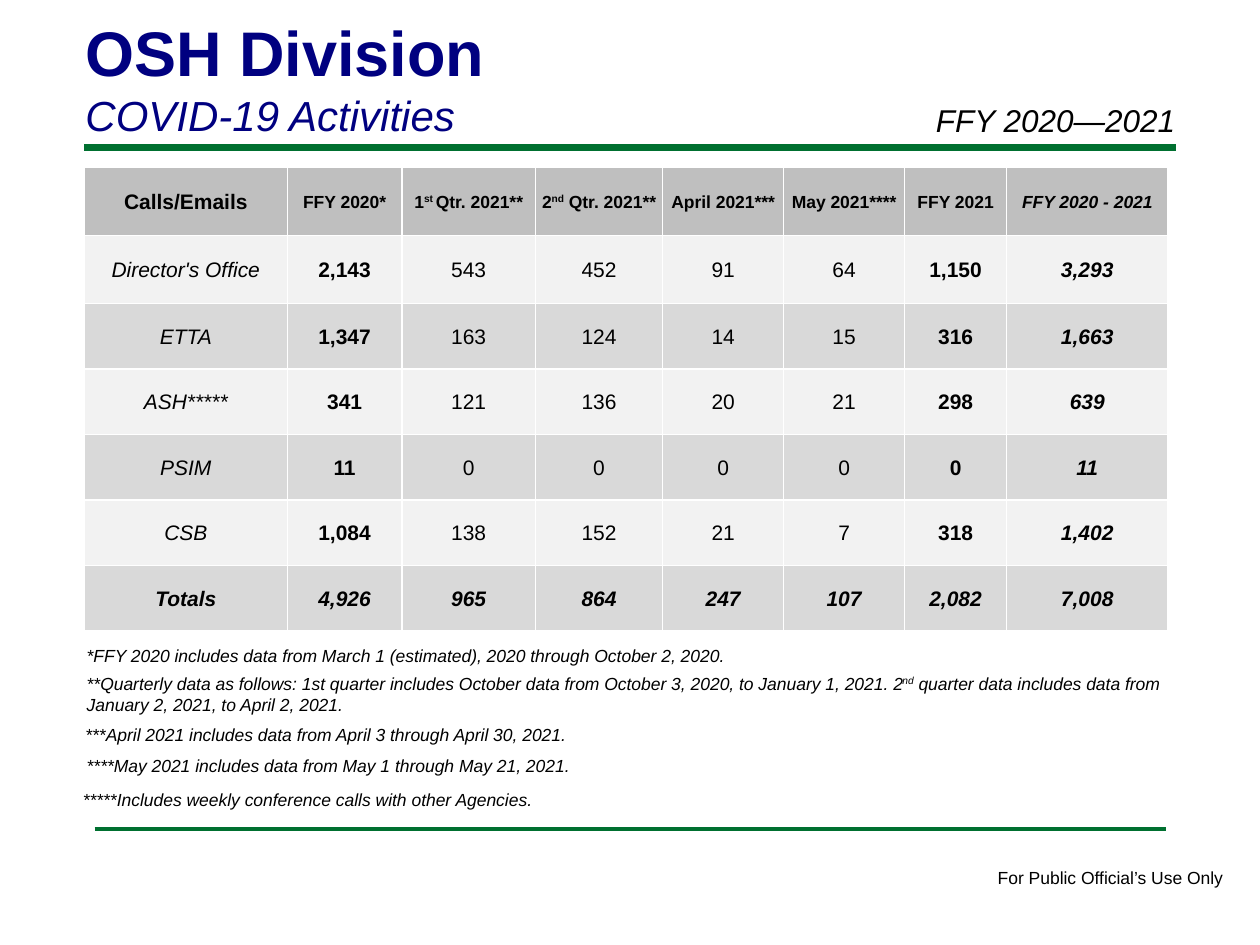
from dataclasses import dataclass

from lxml import etree
from pptx import Presentation
from pptx.dml.color import RGBColor
from pptx.enum.shapes import MSO_CONNECTOR
from pptx.enum.text import MSO_ANCHOR, MSO_AUTO_SIZE, PP_ALIGN
from pptx.oxml.ns import qn
from pptx.util import Inches, Pt

STRAIGHT = MSO_CONNECTOR.STRAIGHT
MIDDLE = MSO_ANCHOR.MIDDLE
GROW = MSO_AUTO_SIZE.SHAPE_TO_FIT_TEXT
CENTER = PP_ALIGN.CENTER

COLORS = {"rule": "007030", "title": "000080", "text": "000000", "border": "FFFFFF",
          "header": "BFBFBF", "light": "F2F2F2", "dark": "D9D9D9"}
FONT = "Arial"

# The page is a grid of 100 columns by 75 rows
UNIT = Inches(0.1)
PAGE_COLUMNS, PAGE_ROWS = 100, 75


@dataclass
class Rule:
    left: float
    top: float
    weight: float


@dataclass
class Note:
    text: str
    left: float
    top: float
    width: float = 87.3
    height: float = 2.7


RULES = [Rule(6.7, 11.7, 4), Rule(7.5, 65.8, 2)]

# Text between carets is superscript
NOTES = [
    Note("*FFY 2020 includes data from March 1 (estimated), 2020 through October 2, 2020.",
         5.9, 50.7),
    Note("**Quarterly data as follows: 1st quarter includes October data from October 3, 2020, "
         "to January 1, 2021. 2^nd^ quarter data includes data from January 2, 2021, "
         "to April 2, 2021.", 5.9, 52.9, height=4.4),
    Note("***April 2021 includes data from April 3 through April 30, 2021.", 5.8, 57),
    Note("****May 2021 includes data from May 1 through May 21, 2021.", 5.9, 59.4),
    Note("*****Includes weekly conference calls with other Agencies.", 5.6, 62.1, width=37.7),
]

COLUMN_WIDTHS = [16.1, 9.1, 10.6, 10.1, 9.6, 9.6, 8.1, 12.8]
ROW_HEIGHTS = [5.4] * 2 + [5.2] * 5
CALLS = [
    ["Calls/Emails", "FFY 2020*", "1^st ^Qtr. 2021**", "2^nd^ Qtr. 2021**",
     "April 2021***", "May 2021****", "FFY 2021", "FFY 2020 - 2021"],
    ["Director's Office", "2,143", "543", "452", "91", "64", "1,150", "3,293"],
    ["ETTA", "1,347", "163", "124", "14", "15", "316", "1,663"],
    ["ASH*****", "341", "121", "136", "20", "21", "298", "639"],
    ["PSIM", "11", "0", "0", "0", "0", "0", "11"],
    ["CSB", "1,084", "138", "152", "21", "7", "318", "1,402"],
    ["Totals", "4,926", "965", "864", "247", "107", "2,082", "7,008"],
]
BOLD_COLUMNS = {1, 6, 7}
ITALIC_COLUMNS = {0, 7}


def grid(*steps: float) -> list[int]:
    return [round(step * UNIT) for step in steps]


def write(para, text: str, *, size: float, color: str = "text",
          bold: bool = False, italic: bool = False) -> None:
    for index, piece in enumerate(text.split("^")):
        span = para.add_run()
        span.text = piece
        font = span.font
        font.name, font.size, font.bold, font.italic = FONT, Pt(size), bold, italic
        font.color.rgb = RGBColor.from_string(COLORS[color])
        if index % 2:
            span._r.get_or_add_rPr().set("baseline", "30000")


def add_box(page, left: float, top: float, width: float, height: float, wrap: bool = True):
    frame = page.shapes.add_textbox(*grid(left, top, width, height)).text_frame
    frame.word_wrap = wrap
    frame.auto_size = GROW
    return frame


def draw_rule(page, rule: Rule) -> None:
    ends = grid(rule.left, rule.top, PAGE_COLUMNS - rule.left, rule.top)
    line = page.shapes.add_connector(STRAIGHT, *ends)
    line.line.color.rgb = RGBColor.from_string(COLORS["rule"])
    line.line.width = Pt(rule.weight)
    etree.SubElement(line._element.spPr, qn("a:effectLst"))


def draw_borders(cell) -> None:
    properties = cell._tc.get_or_add_tcPr()
    for side in ("a:lnL", "a:lnR", "a:lnT", "a:lnB"):
        edge = etree.SubElement(properties, qn(side), w=str(Pt(1)))
        fill = etree.SubElement(edge, qn("a:solidFill"))
        etree.SubElement(fill, qn("a:srgbClr"), val=COLORS["border"])


def draw_cell(cell, text: str, row: int, column: int) -> None:
    header, totals = row == 0, row == len(CALLS) - 1
    cell.margin_left = cell.margin_right = cell.margin_top = Inches(0.01)
    cell.margin_bottom = 0
    cell.vertical_anchor = MIDDLE
    draw_borders(cell)
    shade = "header" if header else "light" if row % 2 else "dark"
    cell.fill.solid()
    cell.fill.fore_color.rgb = RGBColor.from_string(COLORS[shade])
    para = cell.text_frame.paragraphs[0]
    para.alignment = CENTER
    write(para, text, size=10 if header and column else 12,
          bold=header or totals or column in BOLD_COLUMNS,
          italic=totals or (column in ITALIC_COLUMNS and not (header and column == 0)))


def draw_table(page) -> None:
    place = grid(6.7, 13.3, sum(COLUMN_WIDTHS), sum(ROW_HEIGHTS))
    table = page.shapes.add_table(len(CALLS), len(COLUMN_WIDTHS), *place).table
    table.horz_banding = False
    for column, width in zip(table.columns, grid(*COLUMN_WIDTHS)):
        column.width = width
    for row, height in zip(table.rows, grid(*ROW_HEIGHTS)):
        row.height = height
    for row, texts in enumerate(CALLS):
        for column, text in enumerate(texts):
            draw_cell(table.cell(row, column), text, row, column)


def main() -> None:
    deck = Presentation()
    deck.slide_width, deck.slide_height = grid(PAGE_COLUMNS, PAGE_ROWS)
    page = deck.slides.add_slide(deck.slide_layouts[6])

    # Rules and footer
    for rule in RULES:
        draw_rule(page, rule)
    footer = add_box(page, 78.2, 68.3, 20.1, 2.7, wrap=False)
    write(footer.paragraphs[0], "For Public Official’s Use Only", size=10)

    # Heading and period
    heading = add_box(page, 5.8, 0.6, 82.5, 11.1)
    write(heading.paragraphs[0], "OSH Division", size=36, color="title", bold=True)
    write(heading.add_paragraph(), "COVID-19 Activities", size=24, color="title", italic=True)
    period = add_box(page, 73.3, 7.5, 25, 4)
    write(period.paragraphs[0], "FFY 2020—2021", size=18, italic=True)

    # Table and its notes
    draw_table(page)
    for note in NOTES:
        frame = add_box(page, note.left, note.top, note.width, note.height)
        write(frame.paragraphs[0], note.text, size=10, italic=True)

    deck.save("out.pptx")


if __name__ == "__main__":
    main()
